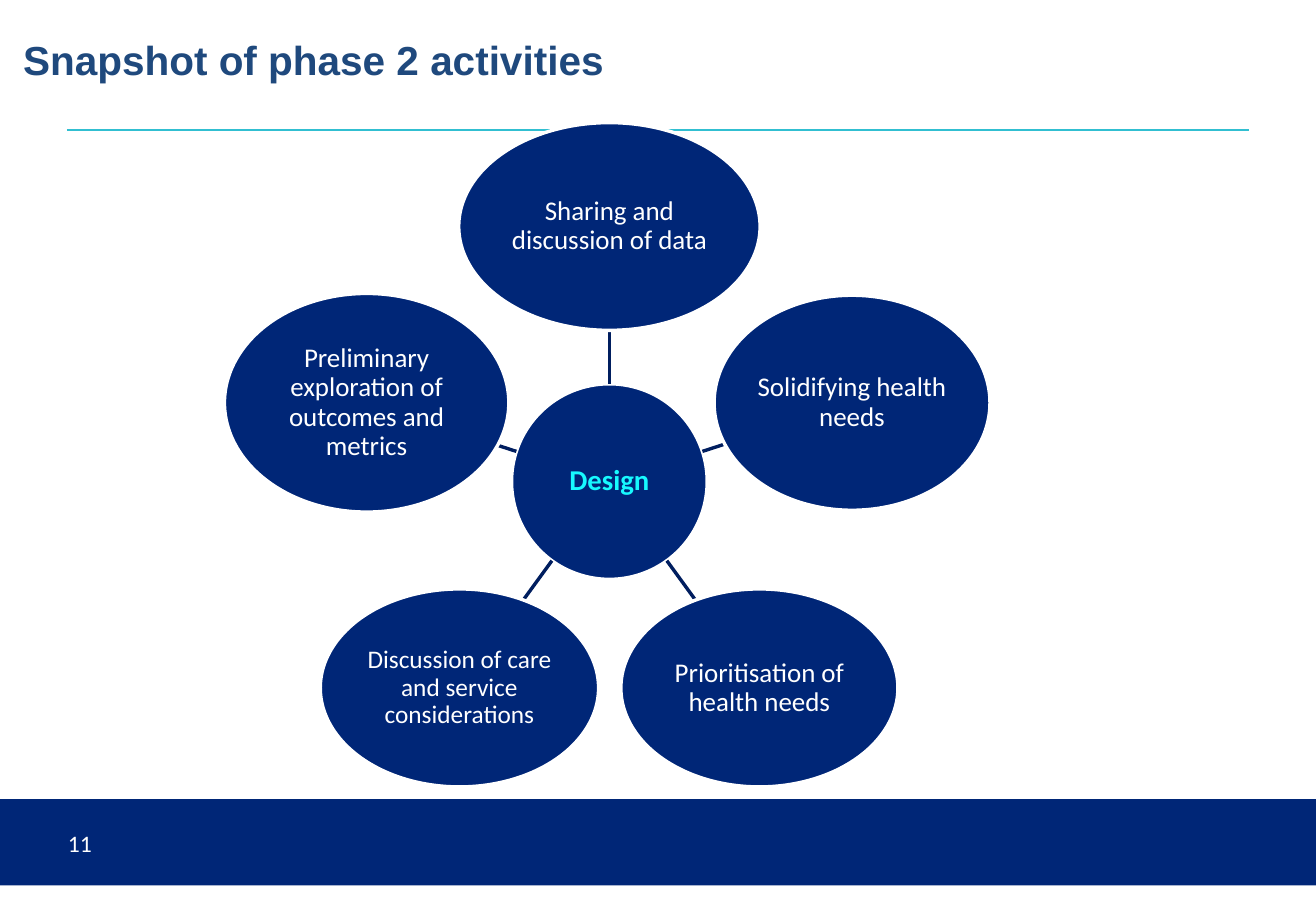
"""Build the phase 2 activities slide: a design hub with five activities around it."""
from dataclasses import dataclass
from math import cos, hypot, radians, sin

from pptx import Presentation, util as u
from pptx.dml.color import RGBColor
from pptx.enum import shapes, text
from pptx.oxml.ns import qn
from pptx.shapes.autoshape import Shape
from pptx.slide import Slide
from pptx.text.text import TextFrame
from lxml import etree

COLORS = {
    "navy": "002677",
    "spoke": "001E5F",
    "teal": "31BFD1",
    "title": "1F497D",
    "cyan": "17F9FF",
    "white": "FFFFFF",
}
CELL = u.Inches(0.1)
COLUMNS, ROWS = 108.3, 75
HUB_COLUMN, HUB_ROW = 50.15, 39.65
HUB_SIZE = 16.1
ORBIT = 21
FIRST_ANGLE = -90


@dataclass
class Bubble:
    label: str
    width: float
    height: float
    size: int = 16
    color: str = "white"
    bold: bool = False


HUB = Bubble("Design", HUB_SIZE, HUB_SIZE, 17, "cyan", True)
ACTIVITIES = [
    Bubble("Sharing and discussion of data", 24.8, 17.1),
    Bubble("Solidifying health needs", 22.7, 17.7),
    Bubble("Prioritisation of health needs", 22.8, 16.3),
    Bubble("Discussion of care and service considerations", 22.9, 16.3, 15),
    Bubble("Preliminary exploration of outcomes and metrics", 23.4, 18),
]


def cells(*counts: float) -> list[int]:
    """Turn grid cells into slide lengths."""
    return [round(count * CELL) for count in counts]


def rgb(name: str) -> RGBColor:
    """Look up a named colour."""
    return RGBColor.from_string(COLORS[name])


def write(frame: TextFrame, words: str, face: str, size: int, color: str,
          align: text.PP_ALIGN, anchor: text.MSO_ANCHOR, bold: bool = False) -> None:
    """Fill a frame with one formatted paragraph."""
    frame.text = words
    frame.word_wrap = True
    frame.auto_size = text.MSO_AUTO_SIZE.NONE
    frame.vertical_anchor = anchor
    paragraph = frame.paragraphs[0]
    paragraph.alignment = align
    font = paragraph.runs[0].font
    font.name, font.size, font.bold = face, u.Pt(size), bold
    font.color.rgb = rgb(color)


def add_block(slide: Slide, kind: shapes.MSO_SHAPE, left: float, top: float,
              width: float, height: float) -> Shape:
    """Draw a plain navy shape."""
    block = slide.shapes.add_shape(kind, *cells(left, top, width, height))
    block.shadow.inherit = False
    block.fill.solid()
    block.fill.fore_color.rgb = rgb("navy")
    block.line.fill.background()
    return block


def add_rule(slide: Slide, start: tuple[float, float], end: tuple[float, float],
             color: str, points: float) -> None:
    """Draw a straight line without a shadow."""
    rule = slide.shapes.add_connector(shapes.MSO_CONNECTOR.STRAIGHT, *cells(*start, *end))
    rule.line.color.rgb = rgb(color)
    rule.line.width = u.Pt(points)
    etree.SubElement(rule._element.spPr, qn("a:effectLst"))


def add_bubble(slide: Slide, bubble: Bubble, column: float, row: float) -> None:
    """Draw a labelled ellipse centred on a grid point."""
    ellipse = add_block(slide, shapes.MSO_SHAPE.OVAL, column - bubble.width / 2,
                        row - bubble.height / 2, bubble.width, bubble.height)
    ellipse.line.color.rgb = rgb("white")
    ellipse.line.width = u.Pt(2)
    frame = ellipse.text_frame
    frame.margin_left = frame.margin_right = u.Inches(0.01)
    frame.margin_top = frame.margin_bottom = u.Inches(0.01)
    write(frame, bubble.label, "Calibri", bubble.size, bubble.color,
          text.PP_ALIGN.CENTER, text.MSO_ANCHOR.MIDDLE, bubble.bold)
    frame.paragraphs[0].line_spacing = 0.9


def add_activity(slide: Slide, activity: Bubble, angle: float) -> None:
    """Draw an activity on the orbit and the spoke that ties it to the hub."""
    dx, dy = cos(radians(angle)), sin(radians(angle))
    reach = 1 / hypot(2 * dx / activity.width, 2 * dy / activity.height)
    start, end = [(HUB_COLUMN + distance * dx, HUB_ROW + distance * dy)
                  for distance in (HUB_SIZE / 2, ORBIT - reach)]
    add_rule(slide, start, end, "spoke", 2)
    add_bubble(slide, activity, HUB_COLUMN + ORBIT * dx, HUB_ROW + ORBIT * dy)


def main() -> None:
    """Build and save the slide."""
    deck = Presentation()
    deck.slide_width, deck.slide_height = cells(COLUMNS, ROWS)
    slide = deck.slides.add_slide(deck.slide_layouts[5])

    add_block(slide, shapes.MSO_SHAPE.RECTANGLE, 0, 65.8, COLUMNS, 7.1)
    add_rule(slide, (5.5, 10.7), (102.8, 10.7), "teal", 1)

    heading = slide.shapes.title
    heading.left, heading.top, heading.width, heading.height = cells(0.9, -0.3, 107.4, 7.7)
    write(heading.text_frame, "Snapshot of phase 2 activities", "Arial", 24, "title",
          text.PP_ALIGN.LEFT, text.MSO_ANCHOR.BOTTOM, True)

    page_number = slide.shapes.add_textbox(*cells(4.6, 67.4, 30, 4))
    write(page_number.text_frame, "11", "Calibri", 14, "white",
          text.PP_ALIGN.LEFT, text.MSO_ANCHOR.MIDDLE)

    add_bubble(slide, HUB, HUB_COLUMN, HUB_ROW)
    for index, activity in enumerate(ACTIVITIES):
        add_activity(slide, activity, FIRST_ANGLE + index * 360 / len(ACTIVITIES))

    deck.save("out.pptx")


if __name__ == "__main__":
    main()
